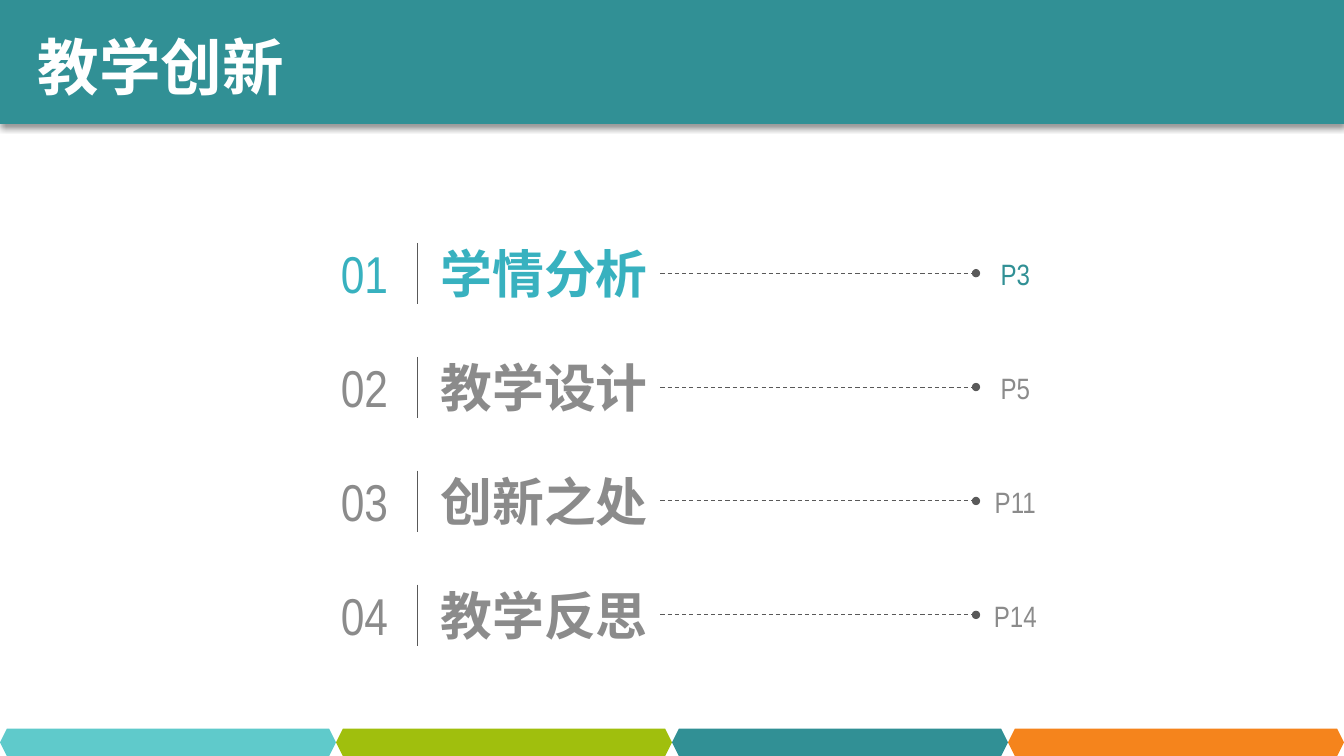
from lxml import etree
from pptx import Presentation
from pptx import util as u
from pptx.dml import color
from pptx.enum import dml, shapes, text
from pptx.oxml import ns

LATIN, CHINESE = "Arial Narrow", "Noto Sans CJK SC"
TEAL, AQUA, GRAY, DARK, WHITE = "319095", "38B1BF", "8B8B8B", "595959", "FFFFFF"


def rgb(value):
    return color.RGBColor.from_string(value)


def child(parent, tag, **attributes):
    return etree.SubElement(parent, ns.qn(tag), attributes)


class ContentsSlide:
    """Draw the elements of a contents slide in one shared style."""

    def __init__(self, deck):
        self.slide = deck.slides.add_slide(deck.slide_layouts[6])
        self.shapes = self.slide.shapes

    def label(self, words, box, size, font, ink, bold=False, centred=True,
              wrap=True, insets=(0.13, 0.07)):
        frame = self.shapes.add_textbox(*map(u.Inches, box)).text_frame
        frame.word_wrap = wrap
        frame.auto_size = text.MSO_AUTO_SIZE.SHAPE_TO_FIT_TEXT
        frame.margin_left = frame.margin_right = u.Inches(insets[0])
        frame.margin_top = frame.margin_bottom = u.Inches(insets[1])
        paragraph = frame.paragraphs[0]
        paragraph.alignment = text.PP_ALIGN.CENTER if centred else text.PP_ALIGN.LEFT
        run = paragraph.add_run()
        run.text = words
        run.font.size, run.font.bold = u.Pt(size), bold
        run.font.color.rgb = rgb(ink)
        run.font.name = font
        child(run.font._element, "a:ea", typeface=font)

    def rule(self, start, end, dotted_leader=False):
        ends = map(u.Inches, (*start, *end))
        rule = self.shapes.add_connector(shapes.MSO_CONNECTOR.STRAIGHT, *ends)
        rule.line.color.rgb = rgb(DARK)
        rule.line.width = u.Pt(0.75)
        if dotted_leader:
            rule.line.dash_style = dml.MSO_LINE.DASH
            child(rule.line._get_or_add_ln(), "a:tailEnd", type="oval")
        child(rule._element.spPr, "a:effectLst")

    def block(self, kind, box, fill, parent=None):
        block = (parent or self.shapes).add_shape(kind, *map(u.Inches, box))
        block.shadow.inherit = False
        block.fill.solid()
        block.fill.fore_color.rgb = rgb(fill)
        block.line.fill.background()
        return block

    def banner(self, title):
        band = self.block(shapes.MSO_SHAPE.RECTANGLE, (0, 0, 13.33, 1.23), TEAL)
        effects = band._element.spPr.find(ns.qn("a:effectLst"))
        shadow = child(effects, "a:outerShdw", blurRad=str(u.Pt(4)),
                       dist=str(u.Pt(3)), dir="5400000", algn="t", rotWithShape="0")
        child(child(shadow, "a:srgbClr", val="000000"), "a:alpha", val="40000")
        self.label(title, (0.26, 0.24, 2.67, 0.84), 44, CHINESE, WHITE,
                   bold=True, wrap=False, insets=(0.1, 0.05))

    def entry(self, number, heading, page, top, ink, page_ink):
        middle = top + 0.38
        self.label(f"{number:02}", (3.18, top, 0.87, 0.76), 37, LATIN, ink)
        self.rule((4.14, top + 0.08), (4.14, top + 0.69))
        self.label(heading, (4.24, top, 3.67, 0.76), 37, CHINESE, ink,
                   bold=True, centred=False)
        self.rule((6.55, middle), (9.68, middle), dotted_leader=True)
        self.label(f"P{page}", (9.59, top + 0.14, 0.96, 0.49), 21, LATIN, page_ink)

    def footer(self, fills):
        strip = self.shapes.add_group_shape().shapes
        width = 13.33 / len(fills)
        for index, fill in enumerate(fills):
            self.block(shapes.MSO_SHAPE.HEXAGON,
                       (index * width, 7.23, width, 0.27), fill, strip)


def main():
    deck = Presentation()
    deck.slide_width, deck.slide_height = u.Inches(13.33), u.Inches(7.5)
    contents = ContentsSlide(deck)
    chapters = [("学情分析", 3), ("教学设计", 5), ("创新之处", 11), ("教学反思", 14)]
    for index, (heading, page) in enumerate(chapters):
        ink, page_ink = (GRAY, GRAY) if index else (AQUA, TEAL)
        contents.entry(index + 1, heading, page, 2.33 + 1.13 * index, ink, page_ink)
    contents.banner("教学创新")
    contents.footer(["5FCACB", "A0BF0D", TEAL, "F5841C"])
    deck.save("out.pptx")


if __name__ == "__main__":
    main()
